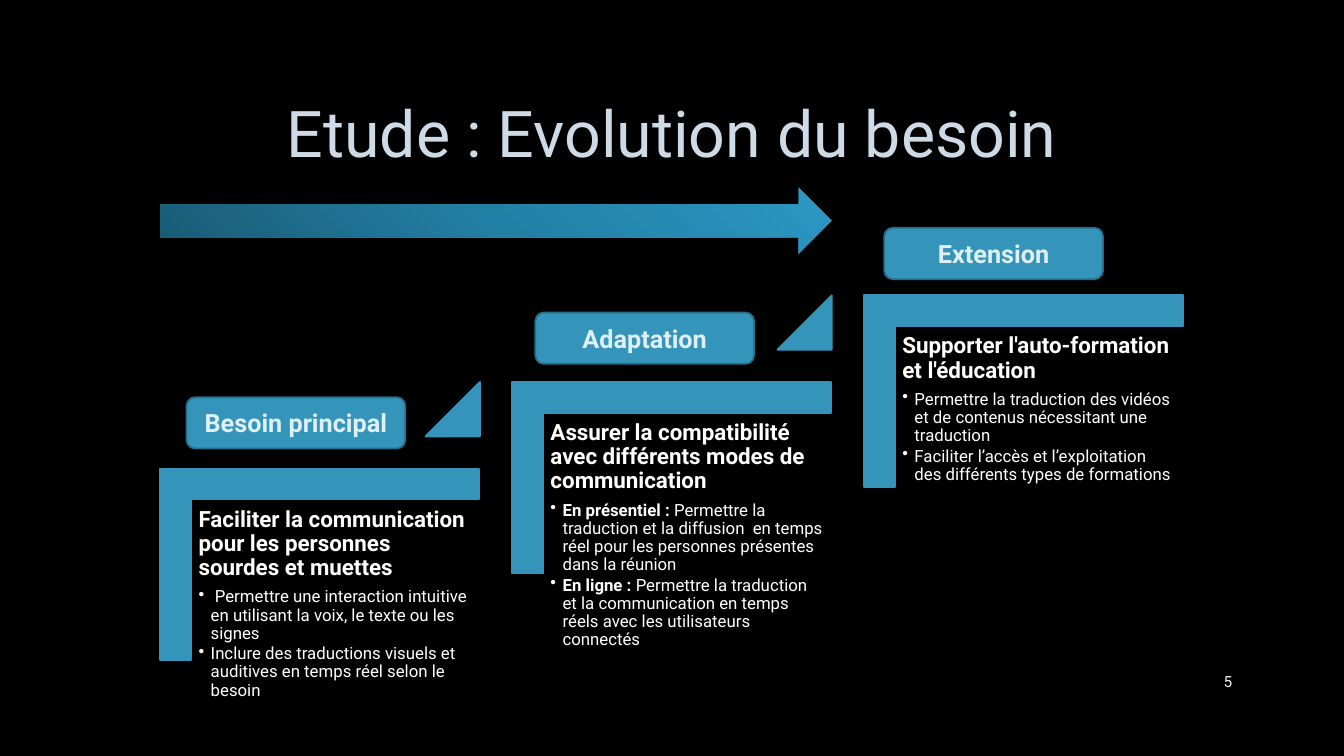
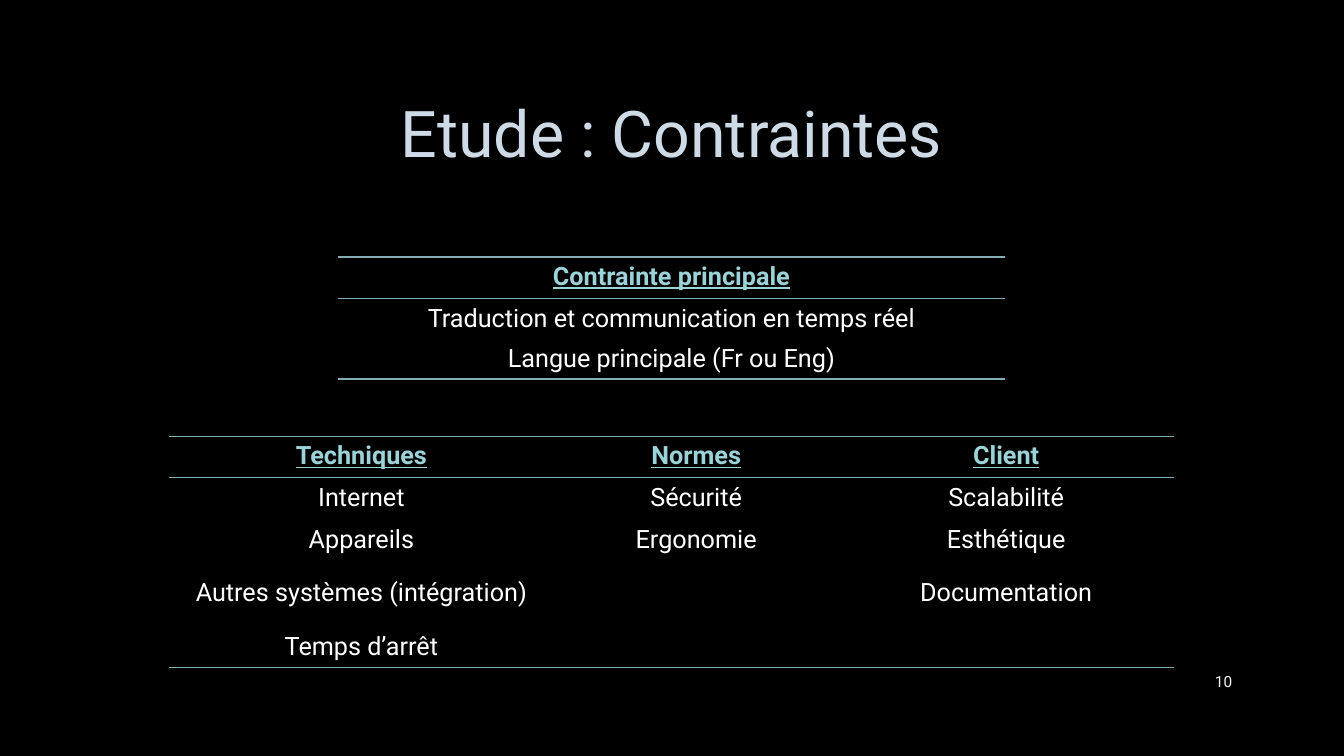
from dataclasses import dataclass

from lxml import etree
from pptx import Presentation
from pptx.dml.color import RGBColor
from pptx.enum.shapes import MSO_SHAPE
from pptx.enum.text import MSO_ANCHOR, MSO_AUTO_SIZE, PP_ALIGN
from pptx.oxml import parse_xml
from pptx.oxml.ns import qn
from pptx.presentation import Presentation as PresentationType
from pptx.shapes.autoshape import Shape
from pptx.slide import Slide
from pptx.text.text import Font, TextFrame
from pptx.util import Inches, Pt

CORNER = MSO_SHAPE.CORNER
TRIANGLE = MSO_SHAPE.ISOSCELES_TRIANGLE
ROUNDED = MSO_SHAPE.ROUNDED_RECTANGLE
ARROW = MSO_SHAPE.RIGHT_ARROW
CENTER, RIGHT = PP_ALIGN.CENTER, PP_ALIGN.RIGHT
TOP, MIDDLE = MSO_ANCHOR.TOP, MSO_ANCHOR.MIDDLE

FONT = "Roboto"
TITLE_ONLY_LAYOUT = 5
COLORS = {
    "background": "000000",
    "title": "CEDBE6",
    "title_outline": "404040",
    "number": "F2F2F2",
    "text": "FFFFFF",
    "accent": "3494BA",
    "label_line": "266D8A",
    "label_text": "DEF0F2",
    "table_header": "9BD3D9",
    "table_rule": "84ACB6",
}
ARROW_STOPS = ((0, "195A74"), (50, "2380A5"), (100, "2A98C4"))
DRAWING_NS = 'xmlns:a="http://schemas.openxmlformats.org/drawingml/2006/main"'

# Offset from one step of the staircase to the next
STEP_RUN, STEP_RISE = 3.49, 0.86
LABEL_RUN, LABEL_RISE = 3.46, 0.84


@dataclass(frozen=True)
class Box:
    left: float
    top: float
    width: float
    height: float

    def shifted(self, index: int, run: float, rise: float) -> "Box":
        return Box(self.left + index * run, self.top - index * rise, self.width, self.height)

    def lengths(self) -> tuple[int, int, int, int]:
        return Inches(self.left), Inches(self.top), Inches(self.width), Inches(self.height)


@dataclass(frozen=True)
class Bullet:
    lead: str
    text: str


@dataclass(frozen=True)
class Step:
    label: str
    heading: str
    bullets: tuple[Bullet, ...]


@dataclass(frozen=True)
class TableData:
    left: float
    top: float
    widths: tuple[float, ...]
    heights: tuple[float, ...]
    rows: tuple[tuple[str, ...], ...]


TITLE_BOX = Box(1, 0.67, 11.32, 1.38)
NUMBER_BOX = Box(11.5, 6.56, 0.82, 0.4)
CORNER_BOX = Box(2.22, 4.02, 1.9, 3.16)
STEP_TEXT_BOX = Box(1.9, 4.97, 2.86, 2.5)
TRIANGLE_BOX = Box(4.22, 3.79, 0.54, 0.54)
LABEL_BOX = Box(1.85, 3.94, 2.17, 0.51)
ARROW_BOX = Box(1.59, 1.86, 6.66, 0.66)

STEPS = (
    Step("Besoin principal", "Faciliter la communication pour les personnes sourdes et muettes", (
        Bullet(" ", "Permettre une interaction intuitive en utilisant la voix, le texte ou les signes"),
        Bullet("", "Inclure des traductions visuels et auditives en temps réel selon le besoin"),
    )),
    Step("Adaptation", "Assurer la compatibilité avec différents modes de communication", (
        Bullet("En présentiel : ", "Permettre la traduction et la diffusion  en temps réel "
               "pour les personnes présentes dans la réunion"),
        Bullet("En ligne : ", "Permettre la traduction et la communication en temps réels "
               "avec les utilisateurs connectés"),
    )),
    Step("Extension", "Supporter l'auto-formation et l'éducation", (
        Bullet("", "Permettre la traduction des vidéos et de contenus nécessitant une traduction"),
        Bullet("", "Faciliter l’accès et l’exploitation des différents types de formations"),
    )),
)

CATEGORY_TABLE = TableData(1.68, 4.33, (3.81, 2.83, 3.32), (0.41, 0.41, 0.41, 0.65, 0.41), (
    ("Techniques", "Normes", "Client"),
    ("Internet", "Sécurité", "Scalabilité"),
    ("Appareils", "Ergonomie", "Esthétique"),
    ("Autres systèmes (intégration)", "", "Documentation"),
    ("Temps d’arrêt", "", ""),
))
MAIN_TABLE = TableData(3.35, 2.55, (6.62,), (0.41, 0.39, 0.39), (
    ("Contrainte principale",),
    ("Traduction et communication en temps réel",),
    ("Langue principale (Fr ou Eng)",),
))


def color(name: str) -> RGBColor:
    return RGBColor.from_string(COLORS[name])


def format_font(font: Font, size: float, color_name: str, bold: bool = False) -> None:
    font.name = FONT
    font.size = Pt(size)
    font.bold = bold
    font.color.rgb = color(color_name)


# Shared slide parts

def add_base_slide(presentation: PresentationType, title: str, number: int) -> Slide:
    slide = presentation.slides.add_slide(presentation.slide_layouts[TITLE_ONLY_LAYOUT])
    shape = slide.shapes.title
    shape.left, shape.top, shape.width, shape.height = TITLE_BOX.lengths()
    frame = shape.text_frame
    frame.auto_size = MSO_AUTO_SIZE.NONE
    write_line(frame, title, 46, "title", CENTER)
    paragraph = frame.paragraphs[0]
    paragraph.line_spacing = 0.9
    outline = parse_xml(
        f'<a:ln {DRAWING_NS} w="{Pt(0.75)}"><a:solidFill>'
        f'<a:srgbClr val="{COLORS["title_outline"]}"><a:alpha val="10000"/></a:srgbClr>'
        "</a:solidFill></a:ln>")
    paragraph.runs[0]._r.get_or_add_rPr().insert(0, outline)

    number_box = slide.shapes.add_textbox(*NUMBER_BOX.lengths())
    write_line(number_box.text_frame, str(number), 11, "number", RIGHT)
    return slide


def write_line(frame: TextFrame, text: str, size: float, color_name: str,
               alignment: PP_ALIGN, bold: bool = False) -> None:
    frame.word_wrap = True
    frame.vertical_anchor = MIDDLE
    paragraph = frame.paragraphs[0]
    paragraph.text = text
    paragraph.alignment = alignment
    format_font(paragraph.font, size, color_name, bold)


def add_filled_shape(slide: Slide, kind: MSO_SHAPE, box: Box, line_name: str = "accent") -> Shape:
    shape = slide.shapes.add_shape(kind, *box.lengths())
    shape.shadow.inherit = False
    shape.fill.solid()
    shape.fill.fore_color.rgb = color("accent")
    shape.line.color.rgb = color(line_name)
    shape.line.width = Pt(1.25)
    return shape


# Staircase of needs

def add_step_text(slide: Slide, step: Step, box: Box) -> None:
    frame = slide.shapes.add_textbox(*box.lengths()).text_frame
    frame.word_wrap = True
    frame.margin_left = frame.margin_top = frame.margin_right = frame.margin_bottom = Inches(0.07)
    heading = frame.paragraphs[0]
    heading.text = step.heading
    heading.line_spacing = 0.9
    heading.space_after = Pt(5.6)
    format_font(heading.font, 16, "text", bold=True)
    for bullet in step.bullets:
        paragraph = frame.add_paragraph()
        paragraph.level = 1
        properties = paragraph._p.get_or_add_pPr()
        properties.set("marL", str(Inches(0.12)))
        properties.set("indent", str(-Inches(0.12)))
        etree.SubElement(properties, qn("a:buChar")).set("char", "•")
        paragraph.line_spacing = 0.9
        paragraph.space_after = Pt(1.8)
        format_font(paragraph.font, 12, "text")
        if bullet.lead:
            lead = paragraph.add_run()
            lead.text = bullet.lead
            lead.font.bold = True
        paragraph.add_run().text = bullet.text


def add_step(slide: Slide, step: Step, index: int) -> None:
    corner = add_filled_shape(slide, CORNER, CORNER_BOX.shifted(index, STEP_RUN, STEP_RISE))
    corner.rotation = 90
    corner.adjustments[0] = corner.adjustments[1] = 0.16
    add_step_text(slide, step, STEP_TEXT_BOX.shifted(index, STEP_RUN, STEP_RISE))
    if index < len(STEPS) - 1:
        triangle_box = TRIANGLE_BOX.shifted(index, STEP_RUN, STEP_RISE)
        add_filled_shape(slide, TRIANGLE, triangle_box).adjustments[0] = 1
    label_box = LABEL_BOX.shifted(index, LABEL_RUN, LABEL_RISE)
    label = add_filled_shape(slide, ROUNDED, label_box, "label_line")
    write_line(label.text_frame, step.label, 18, "label_text", CENTER, bold=True)


def add_gradient_arrow(slide: Slide) -> None:
    arrow = add_filled_shape(slide, ARROW, ARROW_BOX)
    arrow.line.fill.background()
    stops = "".join(f'<a:gs pos="{position * 1000}"><a:srgbClr val="{value}"/></a:gs>'
                    for position, value in ARROW_STOPS)
    gradient = parse_xml(
        f'<a:gradFill {DRAWING_NS} rotWithShape="1"><a:gsLst>{stops}</a:gsLst>'
        '<a:path path="circle"><a:fillToRect t="100000" r="100000"/></a:path></a:gradFill>')
    properties = arrow._element.spPr
    properties.replace(properties.find(qn("a:solidFill")), gradient)


# Constraint tables

def set_borders(cell, top: bool, bottom: bool) -> None:
    rule = f'<a:solidFill><a:srgbClr val="{COLORS["table_rule"]}"/></a:solidFill>'
    sides = (("lnL", False), ("lnR", False), ("lnT", top), ("lnB", bottom))
    properties = cell._tc.get_or_add_tcPr()
    for position, (side, visible) in enumerate(sides):
        paint = rule if visible else "<a:noFill/>"
        border = parse_xml(f'<a:{side} {DRAWING_NS} w="{Pt(1)}">{paint}</a:{side}>')
        properties.insert(position, border)


def add_ruled_table(slide: Slide, data: TableData) -> None:
    box = Box(data.left, data.top, sum(data.widths), sum(data.heights))
    table = slide.shapes.add_table(len(data.rows), len(data.widths), *box.lengths()).table
    table.horz_banding = False
    for column, width in zip(table.columns, data.widths):
        column.width = Inches(width)
    last_row = len(data.rows) - 1
    for row_index, (texts, height) in enumerate(zip(data.rows, data.heights)):
        table.rows[row_index].height = Inches(height)
        is_header = row_index == 0
        for column_index, text in enumerate(texts):
            cell = table.cell(row_index, column_index)
            cell.fill.background()
            set_borders(cell, top=row_index <= 1, bottom=row_index in (0, last_row))
            cell.vertical_anchor = TOP if is_header else MIDDLE
            paragraph = cell.text_frame.paragraphs[0]
            paragraph.text = text
            paragraph.alignment = CENTER
            format_font(paragraph.font, 18, "table_header" if is_header else "text", is_header)
            paragraph.font.underline = is_header


def main() -> None:
    presentation = Presentation()
    presentation.slide_width = Inches(13.33)
    presentation.slide_height = Inches(7.5)
    background = presentation.slide_master.background.fill
    background.solid()
    background.fore_color.rgb = color("background")

    needs_slide = add_base_slide(presentation, "Etude : Evolution du besoin", 5)
    for index, step in enumerate(STEPS):
        add_step(needs_slide, step, index)
    add_gradient_arrow(needs_slide)

    constraints_slide = add_base_slide(presentation, "Etude : Contraintes", 10)
    for data in (CATEGORY_TABLE, MAIN_TABLE):
        add_ruled_table(constraints_slide, data)

    presentation.save("out.pptx")


if __name__ == "__main__":
    main()
